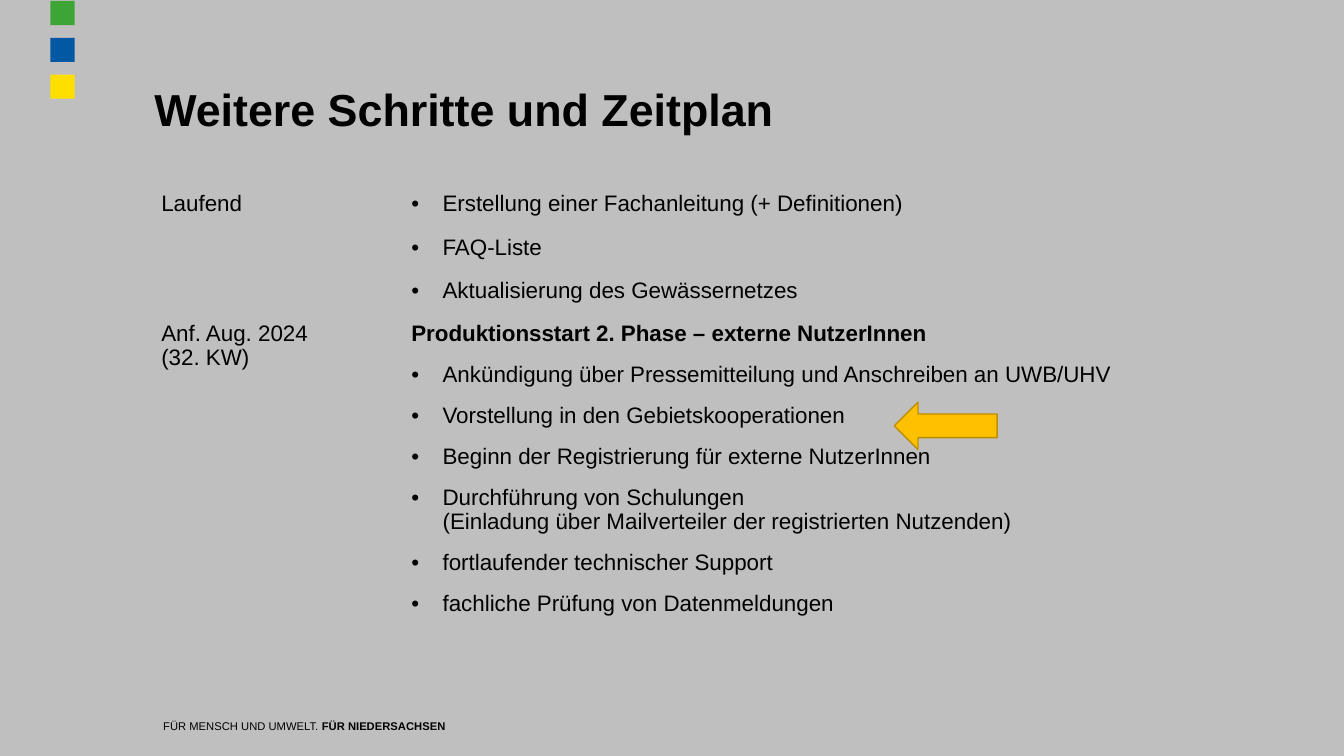
from pptx import Presentation, util as u
from pptx.dml.color import RGBColor
from pptx.enum import shapes, text
from pptx.oxml import ns
from lxml import etree

GREY = RGBColor(0xBF, 0xBF, 0xBF)
BLACK = RGBColor(0, 0, 0)
GREEN = RGBColor(0x3D, 0xA5, 0x35)
BLUE = RGBColor(0x02, 0x58, 0xA3)
YELLOW = RGBColor(0xFF, 0xDF, 0x00)
AMBER = RGBColor(0xFF, 0xC0, 0x00)
DARK_AMBER = RGBColor(0xBD, 0x8E, 0x00)

TITLE_FONT = dict(name="Arial", size=u.Pt(32), bold=True)
TABLE_FONT = dict(name="Arial", size=u.Pt(16), bold=False)
HEADING_FONT = dict(TABLE_FONT, bold=True)
FOOTER_FONT = dict(name="Arial", size=u.Pt(8), bold=False)

PLAIN_TABLE_STYLE = "{2D5ABB26-0587-4C30-8999-92F81FD0307C}"
BULLET_INDENT = u.Inches(0.31)

PHASE_STEPS = [
    "Ankündigung über Pressemitteilung und Anschreiben an UWB/UHV",
    "Vorstellung in den Gebietskooperationen",
    "Beginn der Registrierung für externe NutzerInnen",
    "Durchführung von Schulungen\n(Einladung über Mailverteiler der registrierten Nutzenden)",
    "fortlaufender technischer Support",
    "fachliche Prüfung von Datenmeldungen",
]
# Each row: dates, heading, bulleted steps, space after in points, height
SCHEDULE = [
    (["Laufend"], None, ["Erstellung einer Fachanleitung (+ Definitionen)"], 6, 0.43),
    ([], None, ["FAQ-Liste"], 6, 0.43),
    ([], None, ["Aktualisierung des Gewässernetzes"], 6, 0.43),
    (["Anf. Aug. 2024", "(32. KW)"],
     "Produktionsstart 2. Phase – externe NutzerInnen", PHASE_STEPS, 12, 3.68),
]


def inches(*lengths):
    return [u.Inches(length) for length in lengths]


def format_font(font, values):
    for name, value in values.items():
        setattr(font, name, value)
    font.color.rgb = BLACK


def add_bullet(para):
    properties = para._p.get_or_add_pPr()
    properties.set("marL", str(BULLET_INDENT))
    properties.set("indent", str(-BULLET_INDENT))
    etree.SubElement(properties, ns.qn("a:buFont"), typeface="Arial")
    etree.SubElement(properties, ns.qn("a:buChar"), char="•")


def fill_cell(cell, items, space_after=0):
    """Write items of (words, font values, bulleted) as paragraphs."""
    cell.fill.background()
    frame = cell.text_frame
    for index, (words, font, bulleted) in enumerate(items):
        para = frame.add_paragraph() if index else frame.paragraphs[0]
        if bulleted:
            add_bullet(para)
        para.text = words
        para.space_after = u.Pt(space_after)
        para.line_spacing = 0.97
        for span in para.runs:
            format_font(span.font, font)
        for line_break in para._p.findall(ns.qn("a:br")):
            etree.SubElement(line_break, ns.qn("a:rPr"), sz=str(int(font["size"].pt * 100)))


def add_block(page, kind, box, fill, line=None):
    block = page.shapes.add_shape(kind, *inches(*box))
    block.shadow.inherit = False
    block.fill.solid()
    block.fill.fore_color.rgb = fill
    if line is None:
        block.line.fill.background()
    else:
        block.line.color.rgb = line
        block.line.width = u.Pt(1)


def add_colour_squares(page, left, top, side, pitch):
    for index, colour in enumerate((GREEN, BLUE, YELLOW)):
        add_block(page, shapes.MSO_SHAPE.RECTANGLE,
                  (left, top + index * pitch, side, side), colour)


def place_title(page, box):
    title = page.shapes.title
    title.left, title.top, title.width, title.height = inches(*box)
    frame = title.text_frame
    frame.word_wrap = True
    frame.auto_size = text.MSO_AUTO_SIZE.NONE
    frame.vertical_anchor = text.MSO_ANCHOR.TOP
    para = frame.paragraphs[0]
    para.alignment = text.PP_ALIGN.LEFT
    para.line_spacing = 1.0
    span = para.add_run()
    span.text = "Weitere Schritte und Zeitplan"
    format_font(span.font, TITLE_FONT)


def add_schedule(page, box, date_width):
    table = page.shapes.add_table(len(SCHEDULE), 2, *inches(*box)).table
    table.first_row = table.horz_banding = False
    table._tbl.tblPr.find(ns.qn("a:tableStyleId")).text = PLAIN_TABLE_STYLE
    for column, width in zip(table.columns, (date_width, box[2] - date_width)):
        column.width = u.Inches(width)
    for index, (dates, heading, steps, space_after, height) in enumerate(SCHEDULE):
        table.rows[index].height = u.Inches(height)
        fill_cell(table.cell(index, 0), [(date, TABLE_FONT, False) for date in dates])
        items = [(heading, HEADING_FONT, False)] if heading else []
        items += [(step, TABLE_FONT, True) for step in steps]
        fill_cell(table.cell(index, 1), items, space_after)


def add_footer(page, box):
    frame = page.shapes.add_textbox(*inches(*box)).text_frame
    frame.word_wrap = True
    para = frame.paragraphs[0]
    for words, bold in (("FÜR MENSCH UND UMWELT. ", False), ("FÜR NIEDERSACHSEN", True)):
        span = para.add_run()
        span.text = words
        format_font(span.font, dict(FOOTER_FONT, bold=bold))


def build_schedule_slide(deck):
    page = deck.slides.add_slide(deck.slide_layouts[5])
    page.background.fill.solid()
    page.background.fill.fore_color.rgb = GREY
    add_footer(page, (1.52, 7.09, 8.19, 0.24))
    add_colour_squares(page, left=0.5, top=0.01, side=0.24, pitch=0.365)
    place_title(page, (1.43, 0.76, 10.47, 0.89))
    add_schedule(page, (1.5, 1.86, 10.4, 4.97), date_width=2.48)
    add_block(page, shapes.MSO_SHAPE.LEFT_ARROW, (8.87, 3.99, 1.02, 0.47), AMBER, DARK_AMBER)


def main():
    deck = Presentation()
    deck.slide_width, deck.slide_height = inches(13.33, 7.5)
    build_schedule_slide(deck)
    deck.save("out.pptx")


if __name__ == "__main__":
    main()
